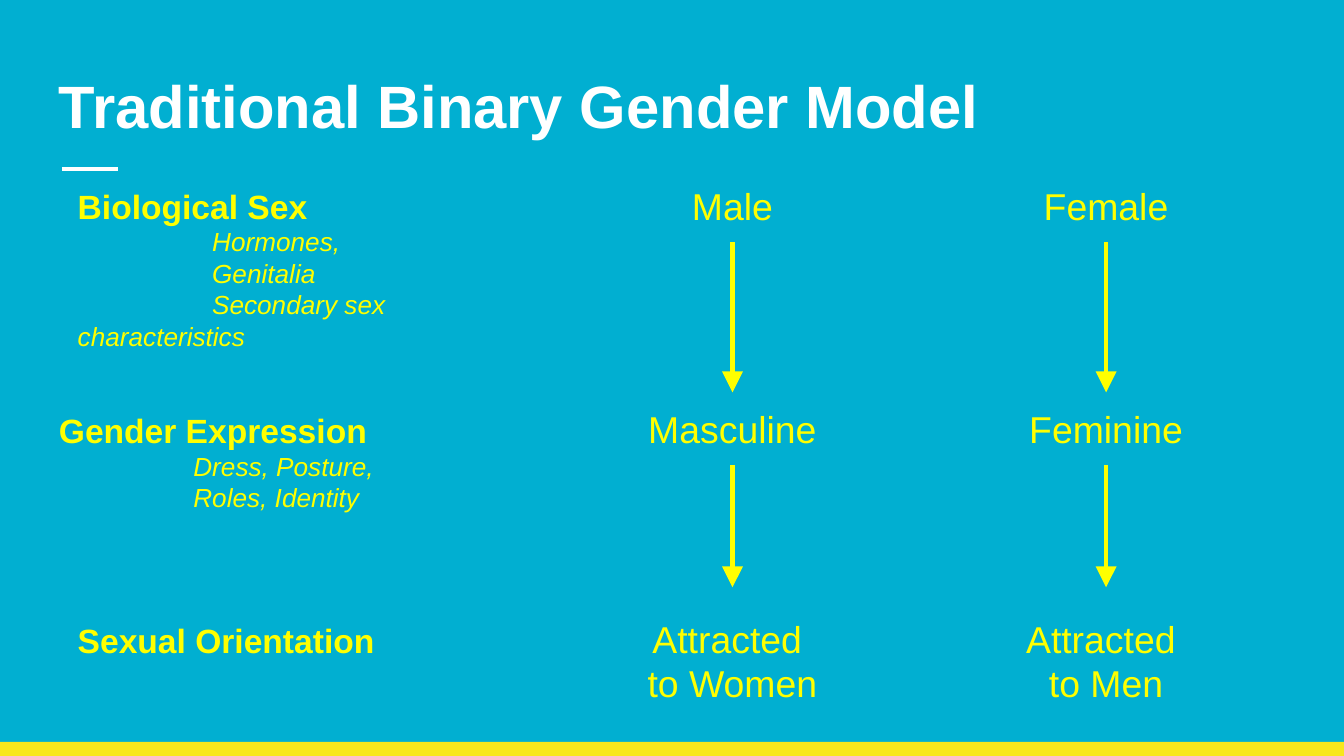
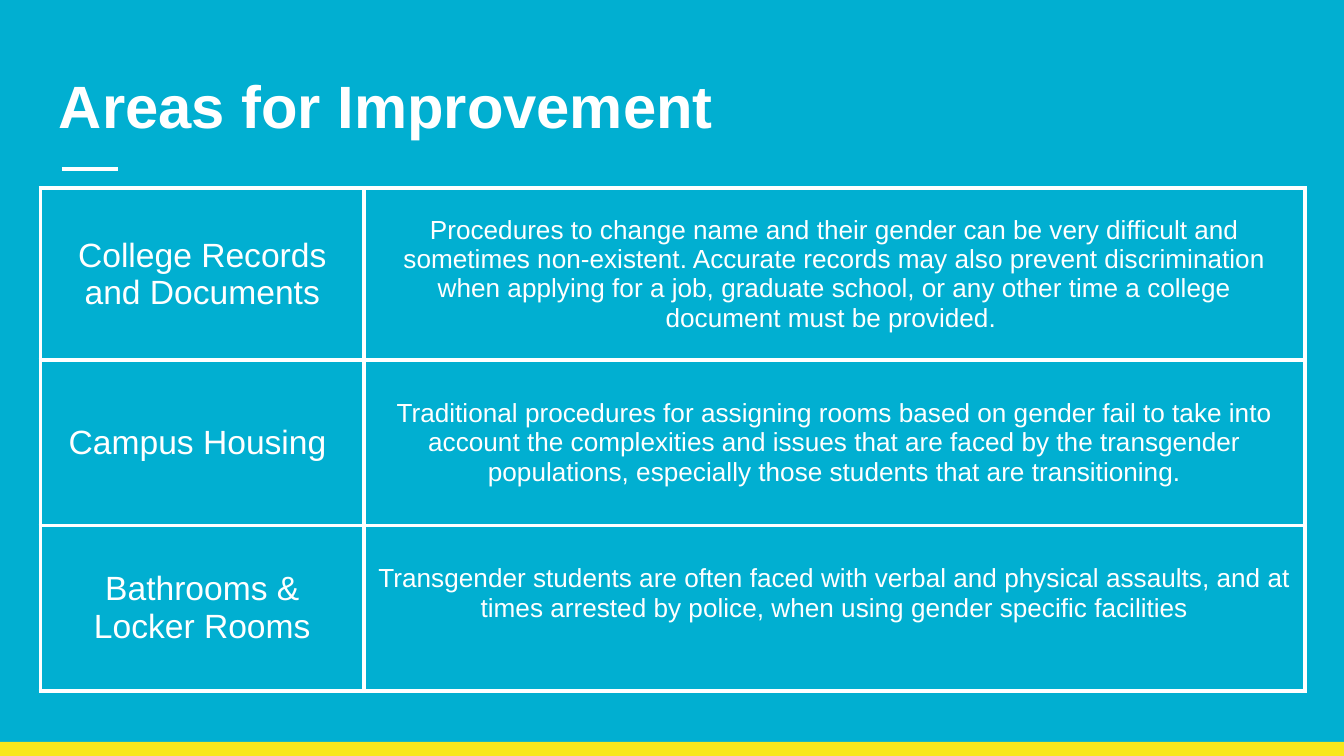
from lxml import etree
from pptx import Presentation
from pptx import util as u
from pptx.dml.color import RGBColor
from pptx.enum import shapes, text
from pptx.oxml.ns import qn

BLUE, WHITE, YELLOW, BAND = "01AFD1", "FFFFFF", "FFFF00", "F8E71C"
FONT = "Arial"
LINE_WIDTH = u.Pt(2.25)
INSET = 0.1


def color(hex_value):
    return RGBColor.from_string(hex_value)


def add_tabs(para):
    """Left tab stops at every inch."""
    tabs = etree.SubElement(para._p.get_or_add_pPr(), qn("a:tabLst"))
    for inch in (1, 2, 3):
        etree.SubElement(tabs, qn("a:tab"), pos=str(int(u.Inches(inch))), algn="l")


def write(frame, lines, size=18, hex_value=WHITE, bold=False, italic=False, align=None):
    """Fill a text frame; a line is a string or (string, font overrides)."""
    for index, line in enumerate(lines):
        content, changes = (line, {}) if isinstance(line, str) else line
        style = {"size": size, "bold": bold, "italic": italic} | changes
        para = frame.paragraphs[0] if index == 0 else frame.add_paragraph()
        para.alignment = align
        if "\t" in content:
            add_tabs(para)
        span = para.add_run()
        span.text = content
        span.font.name = FONT
        span.font.size = u.Pt(style["size"])
        span.font.bold = style["bold"]
        span.font.italic = style["italic"]
        span.font.color.rgb = color(hex_value)


class Deck:
    def __init__(self):
        self.deck = Presentation()
        self.deck.slide_width = u.Inches(10)
        self.deck.slide_height = u.Inches(10) * 9 // 16
        self.page = None

    def add_page(self, title):
        """Start a slide with background, bottom band, title rule and title."""
        self.page = self.deck.slides.add_slide(self.deck.slide_layouts[6])
        self.page.background.fill.solid()
        self.page.background.fill.fore_color.rgb = color(BLUE)
        band = self.page.shapes.add_shape(
            shapes.MSO_SHAPE.RECTANGLE, 0, u.Inches(5.52), u.Inches(10), u.Inches(0.11))
        band.shadow.inherit = False
        band.fill.solid()
        band.fill.fore_color.rgb = color(BAND)
        band.line.fill.background()
        self.add_line((0.46, 1.26), (0.88, 1.26), WHITE)
        self.add_text(0.34, 0.41, 9.32, 0.71, [title], size=32, bold=True)

    def add_text(self, left, top, width, height, lines,
                 anchor=text.MSO_ANCHOR.TOP, **style):
        box = self.page.shapes.add_textbox(*map(u.Inches, (left, top, width, height)))
        frame = box.text_frame
        frame.word_wrap = True
        frame.vertical_anchor = anchor
        frame.margin_left = frame.margin_right = u.Inches(INSET)
        frame.margin_top = frame.margin_bottom = u.Inches(INSET)
        write(frame, lines, **style)
        return box

    def add_line(self, start, end, hex_value):
        line = self.page.shapes.add_connector(
            shapes.MSO_CONNECTOR.STRAIGHT, *map(u.Inches, (*start, *end)))
        line.line.width = LINE_WIDTH
        line.line.color.rgb = color(hex_value)
        etree.SubElement(line._element.spPr, qn("a:effectLst"))
        return line

    def add_arrow(self, upper, lower):
        """Arrow from the bottom of one box to the top of the next."""
        arrow = self.add_line((0, 0), (1, 1), YELLOW)
        arrow.begin_connect(upper, 2)
        arrow.end_connect(lower, 0)
        etree.SubElement(arrow.line._get_or_add_ln(), qn("a:tailEnd"),
                         type="triangle", w="lg", len="lg")

    def add_chain(self, center, steps):
        """Column of centred labels joined by arrows."""
        places = [(1.26, 1.73, 0.54), (2.92, 2.31, 0.54), (4.37, 2.31, 1.09)]
        boxes = [
            self.add_text(center - width / 2, top, width, height, lines,
                          anchor=text.MSO_ANCHOR.MIDDLE, size=20,
                          hex_value=YELLOW, align=text.PP_ALIGN.CENTER)
            for (top, width, height), lines in zip(places, steps)]
        for upper, lower in zip(boxes, boxes[1:]):
            self.add_arrow(upper, lower)

    def add_topic(self, left, top, width, height, heading, details=()):
        """Bold heading with indented italic details."""
        lines = [heading]
        lines += [("\t" + detail, {"size": 14, "bold": False, "italic": True})
                  for detail in details]
        self.add_text(left, top, width, height, lines, hex_value=YELLOW, bold=True)

    def add_table(self, left, top, widths, heights, rows, sizes):
        table = self.page.shapes.add_table(
            len(rows), len(widths), *map(u.Inches, (left, top, sum(widths), sum(heights)))).table
        table.first_row = table.horz_banding = False
        for column, width in zip(table.columns, widths):
            column.width = u.Inches(width)
        for row, height in zip(table.rows, heights):
            row.height = u.Inches(height)
        for row, contents in zip(table.rows, rows):
            for cell, content, size in zip(row.cells, contents, sizes):
                cell.vertical_anchor = text.MSO_ANCHOR.MIDDLE
                cell.margin_left = cell.margin_right = u.Inches(INSET)
                cell.margin_top = cell.margin_bottom = u.Inches(INSET)
                write(cell.text_frame, [content], size=size, align=text.PP_ALIGN.CENTER)
                self.add_borders(cell)
                cell.fill.background()
        return table

    def add_borders(self, cell):
        for side in ("lnL", "lnR", "lnT", "lnB"):
            edge = etree.SubElement(cell._tc.get_or_add_tcPr(), qn("a:" + side),
                                    w=str(int(LINE_WIDTH)))
            fill = etree.SubElement(edge, qn("a:solidFill"))
            etree.SubElement(fill, qn("a:srgbClr"), val=WHITE)


def main():
    deck = Deck()

    # Gender model: two chains beside three topics
    deck.add_page("Traditional Binary Gender Model")
    deck.add_chain(5.45, [["Male"], ["Masculine"], ["Attracted ", "to Women"]])
    deck.add_chain(8.23, [["Female"], ["Feminine"], ["Attracted ", "to Men"]])
    deck.add_topic(0.48, 4.51, 2.52, 0.54, "Sexual Orientation")
    deck.add_topic(0.34, 2.95, 3.48, 1.12, "Gender Expression",
                   ["Dress, Posture,", "Roles, Identity"])
    deck.add_topic(0.48, 1.28, 3.48, 1.12, "Biological Sex",
                   ["Hormones,", "Genitalia", "Secondary sex \tcharacteristics"])

    # Improvements: table of areas and reasons
    deck.add_page("Areas for Improvement")
    table = deck.add_table(0.3, 1.4, [2.41, 7], [1.28, 1.23, 1.23], [
        ("College Records and Documents",
         "Procedures to change name and their gender can be very difficult and "
         "sometimes non-existent. Accurate records may also prevent discrimination "
         "when applying for a job, graduate school, or any other time a college "
         "document must be provided. "),
        ("Campus Housing ",
         "Traditional procedures for assigning rooms based on gender fail to take "
         "into account the complexities and issues that are faced by the transgender "
         "populations, especially those students that are transitioning."),
        ("Bathrooms & Locker Rooms",
         "Transgender students are often faced with verbal and physical assaults, "
         "and at times arrested by police, when using gender specific facilities"),
    ], sizes=[18, 14])
    # The last reason sits half a line above the middle
    table.cell(2, 1).margin_bottom = u.Inches(0.32)

    deck.deck.save("out.pptx")


if __name__ == "__main__":
    main()
